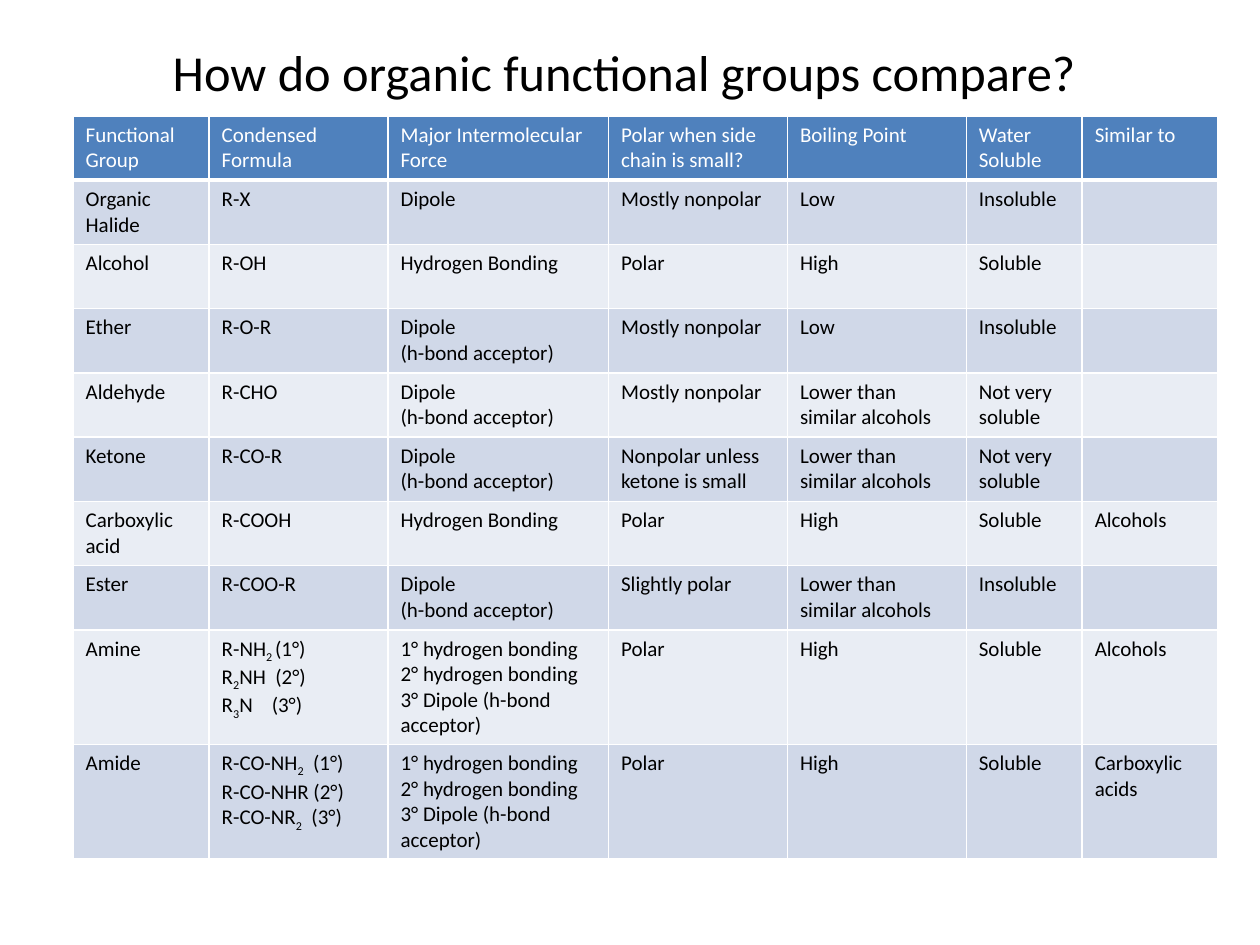
from lxml.etree import SubElement
from pptx import Presentation
from pptx.dml.color import RGBColor
from pptx.enum.text import MSO_ANCHOR, PP_ALIGN
from pptx.oxml.ns import qn
from pptx.util import Inches, Pt

FONT = "Calibri"
BLACK, WHITE = "000000", "FFFFFF"
HEADER_FILL = "4F81BD"
BAND_FILLS = ["D0D8E8", "E9EDF4"]

COLUMN_WIDTHS = [1.08, 1.42, 1.75, 1.42, 1.42, 0.92, 1.08]
ROW_HEIGHT, TALL_ROW_HEIGHT = 0.51, 0.91

ACCEPTOR = "Dipole\n(h-bond acceptor)"
BY_DEGREE = "1° hydrogen bonding\n2° hydrogen bonding\n3° Dipole (h-bond acceptor)"
LOWER = "Lower than similar alcohols"

# A newline starts a paragraph; text between tildes is subscript
GROUPS = [
    ["Functional Group", "Condensed Formula", "Major Intermolecular Force",
     "Polar when side chain is small?", "Boiling Point", "Water Soluble", "Similar to"],
    ["Organic Halide", "R-X", "Dipole", "Mostly nonpolar", "Low", "Insoluble", ""],
    ["Alcohol", "R-OH", "Hydrogen Bonding", "Polar", "High", "Soluble", ""],
    ["Ether", "R-O-R", ACCEPTOR, "Mostly nonpolar", "Low", "Insoluble", ""],
    ["Aldehyde", "R-CHO", ACCEPTOR, "Mostly nonpolar", LOWER, "Not very soluble", ""],
    ["Ketone", "R-CO-R", ACCEPTOR, "Nonpolar unless ketone is small", LOWER,
     "Not very soluble", ""],
    ["Carboxylic acid", "R-COOH", "Hydrogen Bonding", "Polar", "High", "Soluble", "Alcohols"],
    ["Ester", "R-COO-R", ACCEPTOR, "Slightly polar", LOWER, "Insoluble", ""],
    ["Amine", "R-NH~2 ~(1°)\nR~2~NH  (2°)\nR~3~N    (3°)", BY_DEGREE, "Polar", "High",
     "Soluble", "Alcohols"],
    ["Amide", "R-CO-NH~2~  (1°)\nR-CO-NHR (2°)\nR-CO-NR~2~  (3°)", BY_DEGREE, "Polar",
     "High", "Soluble", "Carboxylic acids"],
]


def color(hex_value):
    return RGBColor.from_string(hex_value)


def add_run(paragraph, text, size, hex_value, subscript=False):
    run = paragraph.add_run()
    run.text = text
    run.font.name = FONT
    run.font.size = Pt(size)
    run.font.color.rgb = color(hex_value)
    if subscript:
        run.font._element.set("baseline", "-25000")


def write_cell(cell, text, hex_value):
    frame = cell.text_frame
    for i, line in enumerate(text.split("\n")):
        paragraph = frame.paragraphs[0] if i == 0 else frame.add_paragraph()
        for j, part in enumerate(line.split("~")):
            if part:
                add_run(paragraph, part, 12, hex_value, subscript=j % 2 == 1)


def set_borders(cell, bottom_width):
    properties = cell._tc.get_or_add_tcPr()
    widths = {"a:lnL": 1, "a:lnR": 1, "a:lnT": 1, "a:lnB": bottom_width}
    for position, (side, width) in enumerate(widths.items()):
        line = SubElement(properties, qn(side), w=str(Pt(width)))
        fill = SubElement(line, qn("a:solidFill"))
        SubElement(fill, qn("a:srgbClr"), val=WHITE)
        # Borders come before the fill in a cell's properties
        properties.insert(position, line)


def add_title(slide, left, top, width, height):
    title = slide.shapes.add_textbox(left, top, width, height)
    frame = title.text_frame
    frame.word_wrap = True
    frame.vertical_anchor = MSO_ANCHOR.MIDDLE
    heading = frame.paragraphs[0]
    heading.alignment = PP_ALIGN.CENTER
    add_run(heading, "How do organic functional groups compare? ", 28.8, BLACK)


def add_comparison(slide, left, top, width, height):
    table = slide.shapes.add_table(
        len(GROUPS), len(COLUMN_WIDTHS), left, top, width, height).table
    for column, column_width in zip(table.columns, COLUMN_WIDTHS):
        column.width = Inches(column_width)
    for r, group in enumerate(GROUPS):
        is_header = r == 0
        is_tall = group[0] in ("Amine", "Amide")
        table.rows[r].height = Inches(TALL_ROW_HEIGHT if is_tall else ROW_HEIGHT)
        for c, text in enumerate(group):
            cell = table.cell(r, c)
            cell.fill.solid()
            cell.fill.fore_color.rgb = color(
                HEADER_FILL if is_header else BAND_FILLS[(r - 1) % 2])
            set_borders(cell, 3 if is_header else 1)
            write_cell(cell, text, WHITE if is_header else BLACK)


def main():
    prs = Presentation()
    prs.slide_width, prs.slide_height = Inches(10), Inches(7.5)
    slide = prs.slides.add_slide(prs.slide_layouts[6])

    # Title
    add_title(slide, Inches(0.5), Inches(0.3), Inches(9), Inches(0.53))
    # Table of functional groups
    add_comparison(slide, Inches(0.58), Inches(0.92), Inches(9.08), Inches(5.8))

    prs.save("out.pptx")


if __name__ == "__main__":
    main()
